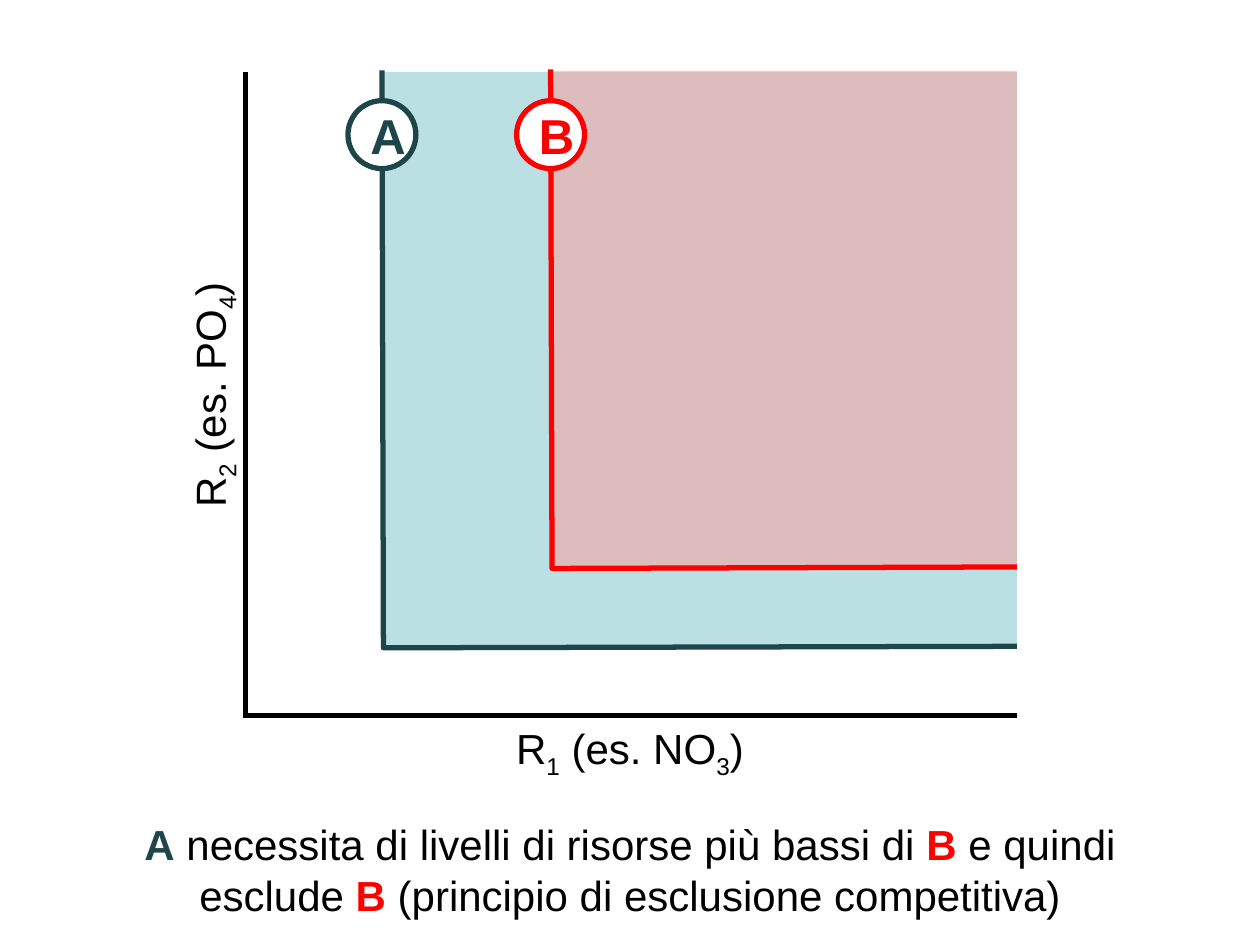
from dataclasses import dataclass

from lxml.etree import SubElement
from pptx import Presentation
from pptx.dml.color import RGBColor
from pptx.enum.shapes import MSO_CONNECTOR, MSO_SHAPE
from pptx.enum.text import MSO_ANCHOR, PP_ALIGN
from pptx.oxml.ns import qn
from pptx.util import Cm, Pt

COLORS = {
    "ink": "000000",
    "white": "FFFFFF",
    "A": "1E4649",
    "A area": "BBE0E3",
    "B": "FF0000",
    "B area": "FF9999",
}
FONT = "Arial"
LINE_WIDTH = Pt(3)

# Shared plot geometry, in centimetres
PLOT_RIGHT = 20.5
AXIS_X, AXIS_TOP, AXIS_Y = 4.95, 1.45, 14.43
BADGE_SIZE, BADGE_TOP = 1.37, 2.03


@dataclass
class Species:
    name: str
    left: float
    top: float
    bottom: float
    opacity: int  # percent


@dataclass
class Piece:
    text: str
    color: str = "ink"
    bold: bool = False
    subscript: bool = False


def rgb(key: str) -> RGBColor:
    return RGBColor.from_string(COLORS[key])


def style_line(line, color: str) -> None:
    line.color.rgb = rgb(color)
    line.width = LINE_WIDTH


def style_run(run, size: int, color: str, bold: bool) -> None:
    run.font.name = FONT
    run.font.size = Pt(size)
    run.font.bold = bold
    run.font.color.rgb = rgb(color)


def add_axis(shapes, x1: float, y1: float, x2: float, y2: float) -> None:
    axis = shapes.add_connector(MSO_CONNECTOR.STRAIGHT, Cm(x1), Cm(y1), Cm(x2), Cm(y2))
    style_line(axis.line, "ink")
    SubElement(axis._element.spPr, qn("a:effectLst"))


def add_text(shapes, left: float, top: float, width: float, height: float,
             pieces: list[Piece], rotation: int = 0) -> None:
    box = shapes.add_textbox(Cm(left), Cm(top), Cm(width), Cm(height))
    box.rotation = rotation
    box.text_frame.word_wrap = True
    paragraph = box.text_frame.paragraphs[0]
    paragraph.alignment = PP_ALIGN.CENTER
    for piece in pieces:
        run = paragraph.add_run()
        run.text = piece.text
        style_run(run, 24, piece.color, piece.bold)
        if piece.subscript:
            run.font._element.set("baseline", "-25000")


def resource_label(number: str, ion: str, count: str) -> list[Piece]:
    return [Piece("R"), Piece(number, subscript=True), Piece(f" (es. {ion}"),
            Piece(count, subscript=True), Piece(")")]


def add_species(shapes, species: Species) -> None:
    left, top, bottom = species.left, species.top, species.bottom

    # Region where the species can grow
    area = shapes.add_shape(MSO_SHAPE.RECTANGLE, Cm(left), Cm(top),
                            Cm(PLOT_RIGHT - left), Cm(bottom - top))
    area.shadow.inherit = False
    area.fill.solid()
    area.fill.fore_color.rgb = rgb(f"{species.name} area")
    area.line.fill.background()
    if species.opacity < 100:
        color = area._element.spPr.find(f".//{qn('a:srgbClr')}")
        SubElement(color, qn("a:alpha"), val=str(species.opacity * 1000))

    # Zero-growth isocline, very slightly skewed
    builder = shapes.build_freeform(Cm(left), Cm(top - 0.03))
    builder.add_line_segments([(Cm(left + 0.03), Cm(bottom)),
                               (Cm(PLOT_RIGHT), Cm(bottom - 0.03))], close=False)
    isocline = builder.convert_to_shape()
    isocline.shadow.inherit = False
    isocline.fill.background()
    style_line(isocline.line, species.name)

    # Lettered badge
    badge = shapes.add_shape(MSO_SHAPE.OVAL, Cm(left - BADGE_SIZE / 2), Cm(BADGE_TOP),
                             Cm(BADGE_SIZE), Cm(BADGE_SIZE))
    badge.shadow.inherit = False
    badge.fill.solid()
    badge.fill.fore_color.rgb = rgb("white")
    style_line(badge.line, species.name)
    badge.text_frame.vertical_anchor = MSO_ANCHOR.MIDDLE
    letter = badge.text_frame.paragraphs[0]
    letter.text = species.name
    letter.alignment = PP_ALIGN.CENTER
    style_run(letter.runs[0], 28, species.name, True)


def main() -> None:
    prs = Presentation()
    prs.slide_width, prs.slide_height = Cm(25.4), Cm(19.05)
    shapes = prs.slides.add_slide(prs.slide_layouts[6]).shapes

    # Axes and their labels
    axes = shapes.add_group_shape().shapes
    add_axis(axes, AXIS_X, AXIS_TOP, AXIS_X, AXIS_Y + 0.03)
    add_axis(axes, PLOT_RIGHT, AXIS_Y, AXIS_X - 0.05, AXIS_Y)
    add_text(shapes, 7.9, 14.45, 9.6, 1.28, resource_label("1", "NO", "3"))
    add_text(shapes, -0.58, 7.32, 9.6, 1.28, resource_label("2", "PO", "4"), rotation=270)

    # Species
    add_species(shapes, Species("A", 7.7, 1.45, 13.06, 100))
    add_species(shapes.add_group_shape().shapes, Species("B", 11.1, 1.43, 11.46, 50))

    # Conclusion
    add_text(shapes, 2.2, 16.38, 21, 2.3, [
        Piece("A", "A", bold=True),
        Piece(" necessita di livelli di risorse più bassi di "),
        Piece("B", "B", bold=True),
        Piece(" e quindi esclude "),
        Piece("B", "B", bold=True),
        Piece(" (principio di esclusione competitiva)"),
    ])

    prs.save("out.pptx")


if __name__ == "__main__":
    main()
